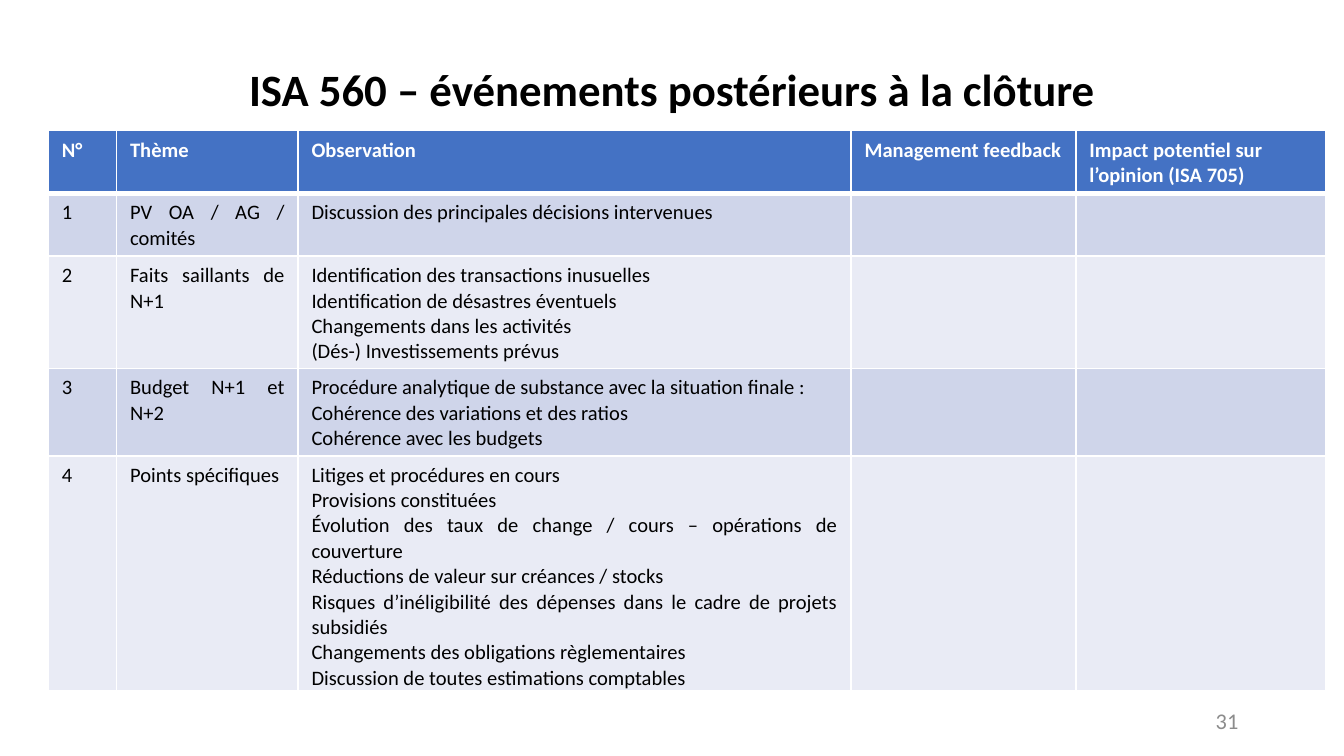
import pptx
import pptx.util
import pptx.dml.color
import pptx.enum.text
import pptx.oxml
import pptx.oxml.ns

Pt = pptx.util.Pt
PP_ALIGN = pptx.enum.text.PP_ALIGN
ANCHOR = pptx.enum.text.MSO_ANCHOR

COLORS = {
    "header": "4472C4",
    "odd": "CFD5EA",
    "even": "E9EBF5",
    "white": "FFFFFF",
    "black": "000000",
    "number": "8C8C8C",
}

HEADERS = ["N°", "Thème", "Observation", "Management feedback",
           "Impact potentiel sur l’opinion (ISA 705)"]

TOPICS = [
    ("PV OA / AG / comités", ["Discussion des principales décisions intervenues"]),
    ("Faits saillants de N+1", [
        "Identification des transactions inusuelles",
        "Identification de désastres éventuels",
        "Changements dans les activités",
        "(Dés-) Investissements prévus",
    ]),
    ("Budget N+1 et N+2", [
        "Procédure analytique de substance avec la situation finale :",
        "Cohérence des variations et des ratios",
        "Cohérence avec les budgets",
    ]),
    ("Points spécifiques", [
        "Litiges et procédures en cours",
        "Provisions constituées",
        "Évolution des taux de change / cours – opérations de couverture",
        "Réductions de valeur sur créances / stocks",
        "Risques d’inéligibilité des dépenses dans le cadre de projets subsidiés",
        "Changements des obligations règlementaires",
        "Discussion de toutes estimations comptables",
    ]),
]


class Deck:
    font = "Calibri"
    table_size = 11

    def __init__(self, width, height):
        self.prs = pptx.Presentation()
        self.prs.slide_width, self.prs.slide_height = Pt(width), Pt(height)
        self.s = self.prs.slides.add_slide(self.prs.slide_layouts[6])

    def style(self, tf, size, color, bold=False, align=None):
        for p in tf.paragraphs:
            p.alignment = align
            for font in [p.font] + [r.font for r in p.runs]:
                font.name, font.size, font.bold = self.font, Pt(size), bold
                font.color.rgb = pptx.dml.color.RGBColor.from_string(COLORS[color])

    def text(self, box, text, size, color, align, bold=False, spacing=None):
        sp = self.s.shapes.add_textbox(*map(Pt, box))
        tf = sp.text_frame
        tf.word_wrap = True
        tf.vertical_anchor = ANCHOR.MIDDLE
        tf.text = text
        tf.paragraphs[0].line_spacing = spacing
        self.style(tf, size, color, bold, align)

    def border(self, cell, side, width):
        ns = pptx.oxml.ns.nsdecls("a")
        cell.fill._xPr.insert(side, pptx.oxml.parse_xml(
            f'<a:ln{"LRTB"[side]} {ns} w="{Pt(width)}"><a:solidFill>'
            f'<a:srgbClr val="{COLORS["white"]}"/></a:solidFill></a:ln{"LRTB"[side]}>'))

    def table(self, box, widths, heights, rows):
        frame = self.s.shapes.add_table(len(rows), len(widths), *map(Pt, box))
        table = frame.table
        for column, width in zip(table.columns, widths):
            column.width = Pt(width)
        for row, height in zip(table.rows, heights):
            row.height = Pt(height)
        frame.height = Pt(box[3])
        for i, row in enumerate(rows):
            header = i == 0
            fill = "header" if header else "odd" if i % 2 else "even"
            for j, text in enumerate(row):
                cell = table.cell(i, j)
                cell.text = text
                justified = not header and j in (1, 2)
                self.style(cell.text_frame, self.table_size,
                           "white" if header else "black", header,
                           PP_ALIGN.JUSTIFY if justified else None)
                cell.fill.solid()
                cell.fill.fore_color.rgb = pptx.dml.color.RGBColor.from_string(COLORS[fill])
                sides = [0, 1, 3] if i == 1 else [0, 1, 2, 3]
                for side in sides:
                    self.border(cell, side, 3 if header and side == 3 else 1)


def main():
    deck = Deck(720, 405)
    deck.text((508.5, 375, 162, 21.6), "31", 12, "number", PP_ALIGN.RIGHT)
    rows = [HEADERS] + [
        [str(n), theme, "\n".join(observations), "", ""]
        for n, (theme, observations) in enumerate(TOPICS, 1)
    ]
    deck.table((26, 70, 684.5, 300), [36.5, 97.2, 296.3, 120.5, 134],
               [20.2, 32.4, 46.8, 46.8, 46.8], rows)
    deck.text((49.5, 10, 621, 78.5), "ISA 560 – événements postérieurs à la clôture",
              24, "black", PP_ALIGN.CENTER, True, 0.9)
    deck.prs.save("out.pptx")


if __name__ == "__main__":
    main()
